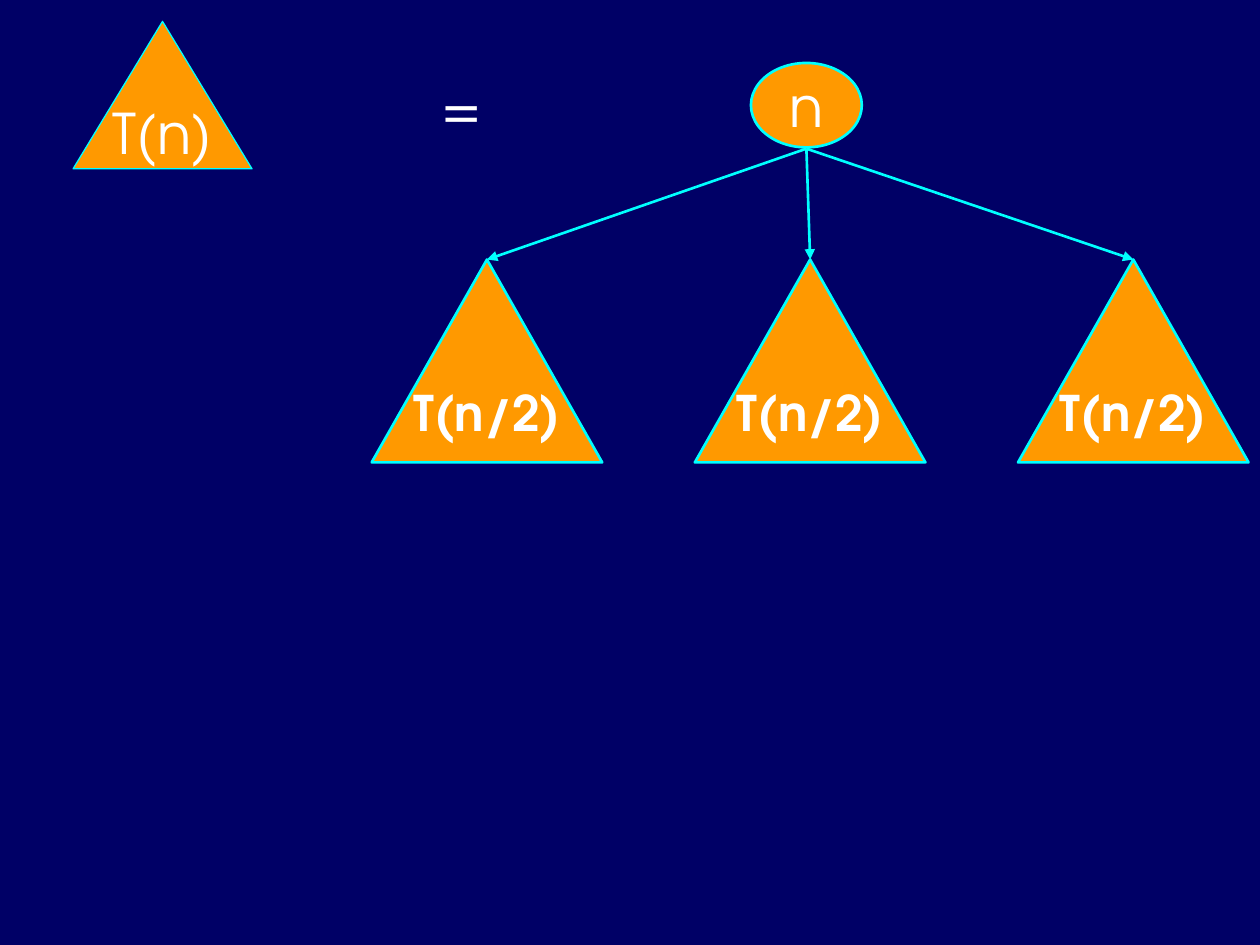
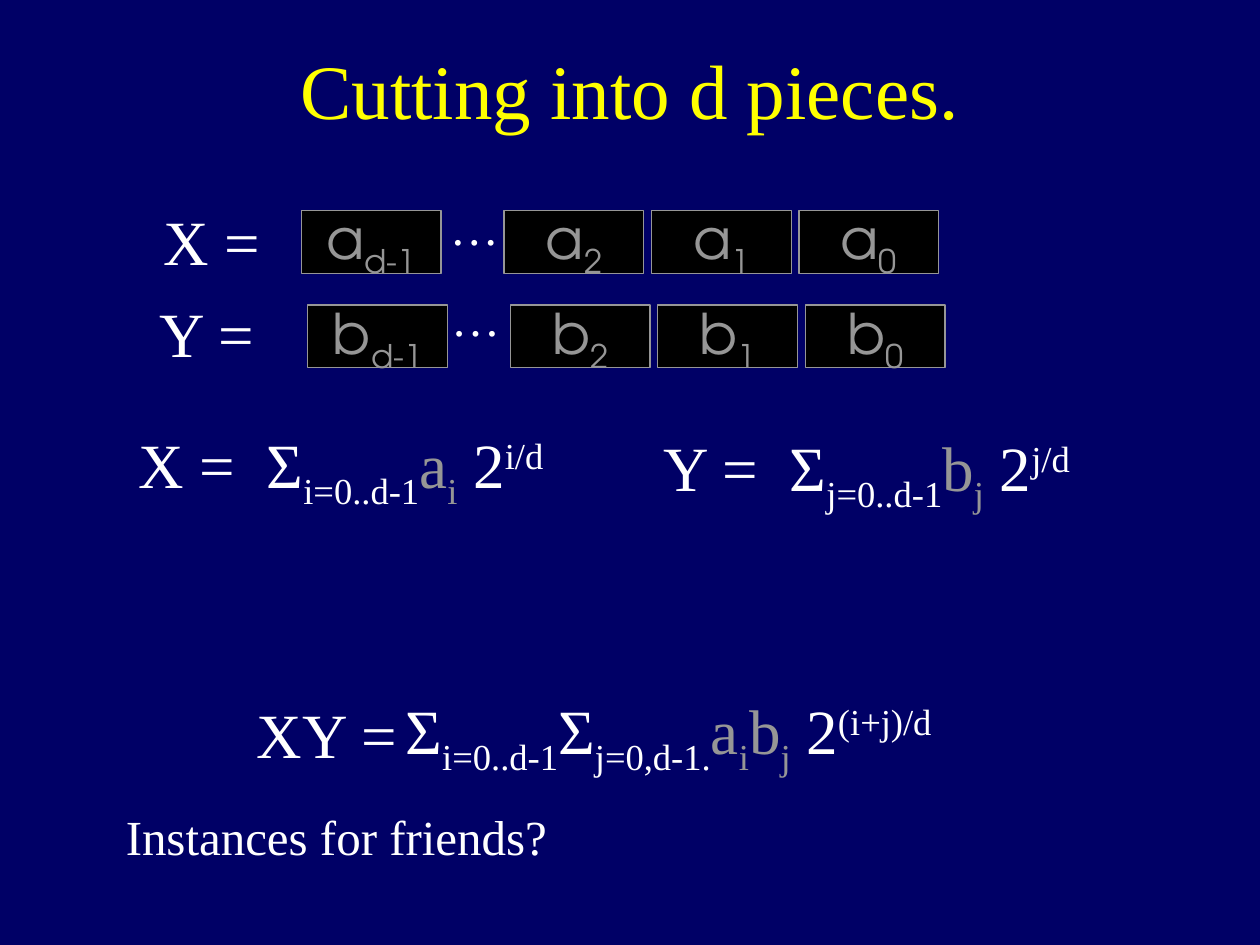
from dataclasses import dataclass

from lxml.etree import SubElement
from pptx import Presentation
from pptx.dml.color import RGBColor
from pptx.enum.shapes import MSO_CONNECTOR, MSO_SHAPE
from pptx.enum.text import MSO_ANCHOR, PP_ALIGN
from pptx.oxml.ns import qn
from pptx.util import Inches, Pt


@dataclass(frozen=True)
class Theme:
    background: str = "000066"
    text: str = "FFFFFF"
    title: str = "FFFF00"
    node: str = "FF9900"
    edge: str = "00FFFF"
    piece: str = "000000"
    muted: str = "969696"
    sans: str = "TeX Gyre Adventor"
    serif: str = "Times New Roman"
    title_size: int = 44
    formula_size: int = 36
    node_size: int = 32
    small_size: int = 28
    line: float = 1.5
    thin_line: float = 0.75


THEME = Theme()
SUB, SUP = -25, 30  # baseline shifts in percent

# Recursion tree: places are left, top, width, height in inches
WHOLE = ("T(n)", (0.58, 0.17, 1.42, 1.17))
EQUALS = ("=", (3.08, 0.53, 1.17, 0.63))
ROOT = ("n", (5.96, 0.5, 0.88, 0.67))
ROOT_BOTTOM = (6.4, 1.18)
SUBTREES = ["T(n/2)"] * 3
SUBTREE_LEFT, SUBTREE_TOP, SUBTREE_PITCH = 2.95, 2.06, 2.565
SUBTREE_SIZE = (1.83, 1.61)

# Numbers cut into pieces: name, letter, label place, dots place, first piece
TITLE = ("Cutting into d pieces.", (0.75, 0.08, 8.5, 1.25))
NUMBERS = [
    ("X =", "a", (1.2, 1.56), (3.47, 1.51), (2.39, 1.67)),
    ("Y =", "b", (1.17, 2.29), (3.48, 2.23), (2.44, 2.42)),
]
FIRST_PIECE = "d-1"
LAST_PIECES = ["2", "1", "0"]
LAST_OFFSET, PIECE_PITCH = 1.61, 1.17
PIECE_SIZE = (1.11, 0.5)
LABEL_SIZE, DOTS_SIZE = (1.1, 0.7), (0.59, 0.57)

# Formulas: place and spans of text, baseline shift, colour
FORMULAS = [
    ((1.0, 3.33, 4.08, 0.92), [
        ("X =  Σ", 0, THEME.text), ("i=0..d-1", SUB, THEME.text),
        ("a", 0, THEME.muted), ("i", SUB, THEME.muted),
        (" 2", 0, THEME.text), ("i/d", SUP, THEME.text)]),
    ((5.17, 3.35, 4.5, 0.92), [
        ("Y =  Σ", 0, THEME.text), ("j=0..d-1", SUB, THEME.text),
        ("b", 0, THEME.muted), ("j", SUB, THEME.muted),
        (" 2", 0, THEME.text), ("j/d", SUP, THEME.text)]),
    ((3.12, 5.44, 6.88, 0.75), [
        ("Σ", 0, THEME.text), ("i=0..d-1", SUB, THEME.text),
        ("Σ", 0, THEME.text), ("j=0,d-1.", SUB, THEME.text),
        ("a", 0, THEME.muted), ("i", SUB, THEME.muted),
        ("b", 0, THEME.muted), ("j", SUB, THEME.muted),
        (" 2", 0, THEME.text), ("(i+j)/d", SUP, THEME.text)]),
]
PRODUCT = ("XY =", (1.94, 5.47, 1.45, 0.71))
QUESTION = ("Instances for friends?", (0.9, 6.35, 3.8, 0.57))


def color(value):
    return RGBColor.from_string(value)


def inches(values):
    return [Inches(value) for value in values]


def write(frame, spans, size, font, align=PP_ALIGN.LEFT, bold=False, before=0):
    """Fill a text frame with one paragraph of (text, baseline, colour) spans."""
    para = frame.paragraphs[0]
    para.alignment = align
    para.space_before = Pt(before)
    for text, baseline, tint in spans:
        span = para.add_run()
        span.text = text
        span.font.size = Pt(size)
        span.font.name = font
        span.font.bold = bold
        span.font.color.rgb = color(tint)
        if baseline:
            span.font._element.set("baseline", str(baseline * 1000))


def add_text(slide, place, spans, size, font=THEME.serif, **style):
    box = slide.shapes.add_textbox(*inches(place))
    box.text_frame.word_wrap = True
    write(box.text_frame, spans, size, font, **style)


def add_figure(slide, kind, place, spans, fill, edge, width, size, bold=False):
    figure = slide.shapes.add_shape(kind, *inches(place))
    figure.shadow.inherit = False
    figure.fill.solid()
    figure.fill.fore_color.rgb = color(fill)
    figure.line.color.rgb = color(edge)
    figure.line.width = Pt(width)
    frame = figure.text_frame
    frame.word_wrap = False
    frame.vertical_anchor = MSO_ANCHOR.MIDDLE
    write(frame, spans, size, THEME.sans, PP_ALIGN.CENTER, bold)
    return figure


def add_node(slide, kind, place, text, width=THEME.line, size=THEME.node_size, bold=False):
    return add_figure(slide, kind, place, [(text, 0, THEME.text)],
                      THEME.node, THEME.edge, width, size, bold)


def add_arrow(slide, start, target):
    """Draw an arrow from a point to the top of the target."""
    start_x, start_y = inches(start)
    arrow = slide.shapes.add_connector(
        MSO_CONNECTOR.STRAIGHT, start_x, start_y,
        target.left + target.width // 2, target.top)
    arrow.end_connect(target, 0)
    arrow.line.color.rgb = color(THEME.edge)
    arrow.line.width = Pt(THEME.line)
    SubElement(arrow.line._get_or_add_ln(), qn("a:tailEnd"), type="triangle")
    SubElement(arrow._element.spPr, qn("a:effectLst"))


def add_piece(slide, left, top, letter, index):
    add_figure(slide, MSO_SHAPE.RECTANGLE, (left, top, *PIECE_SIZE),
               [(letter, 0, THEME.muted), (index, SUB, THEME.muted)],
               THEME.piece, THEME.muted, THEME.thin_line, THEME.node_size)


def build_recursion(deck):
    slide = deck.slides.add_slide(deck.slide_layouts[6])
    text, place = ROOT
    add_node(slide, MSO_SHAPE.OVAL, place, text)
    for column, text in enumerate(SUBTREES):
        left = SUBTREE_LEFT + column * SUBTREE_PITCH
        subtree = add_node(slide, MSO_SHAPE.ISOSCELES_TRIANGLE,
                           (left, SUBTREE_TOP, *SUBTREE_SIZE), text,
                           size=THEME.small_size, bold=True)
        add_arrow(slide, ROOT_BOTTOM, subtree)
    text, place = WHOLE
    add_node(slide, MSO_SHAPE.ISOSCELES_TRIANGLE, place, text, THEME.thin_line)
    text, place = EQUALS
    add_text(slide, place, [(text, 0, THEME.text)], THEME.node_size, THEME.sans,
             align=PP_ALIGN.CENTER, before=9)


def build_pieces(deck):
    slide = deck.slides.add_slide(deck.slide_layouts[5])

    # Title
    text, place = TITLE
    title = slide.shapes.title
    title.left, title.top, title.width, title.height = inches(place)
    title.text_frame.vertical_anchor = MSO_ANCHOR.MIDDLE
    write(title.text_frame, [(text, 0, THEME.title)], THEME.title_size,
          THEME.serif, PP_ALIGN.CENTER)

    # Rows of pieces
    for name, letter, label, dots, (left, top) in NUMBERS:
        add_text(slide, (*label, *LABEL_SIZE), [(name, 0, THEME.text)], THEME.formula_size)
        add_piece(slide, left, top, letter, FIRST_PIECE)
        for column, index in enumerate(LAST_PIECES):
            add_piece(slide, left + LAST_OFFSET + column * PIECE_PITCH, top, letter, index)
        add_text(slide, (*dots, *DOTS_SIZE), [("…", 0, THEME.text)],
                 THEME.small_size, align=PP_ALIGN.CENTER)

    # Formulas and closing question
    for place, spans in FORMULAS:
        add_text(slide, place, spans, THEME.formula_size, before=4)
    for (text, place), size in ((PRODUCT, THEME.formula_size), (QUESTION, THEME.small_size)):
        add_text(slide, place, [(text, 0, THEME.text)], size)


def main():
    deck = Presentation()
    deck.slide_width, deck.slide_height = Inches(10), Inches(7.5)
    background = deck.slide_master.background.fill
    background.solid()
    background.fore_color.rgb = color(THEME.background)
    build_recursion(deck)
    build_pieces(deck)
    deck.save("out.pptx")


if __name__ == "__main__":
    main()
